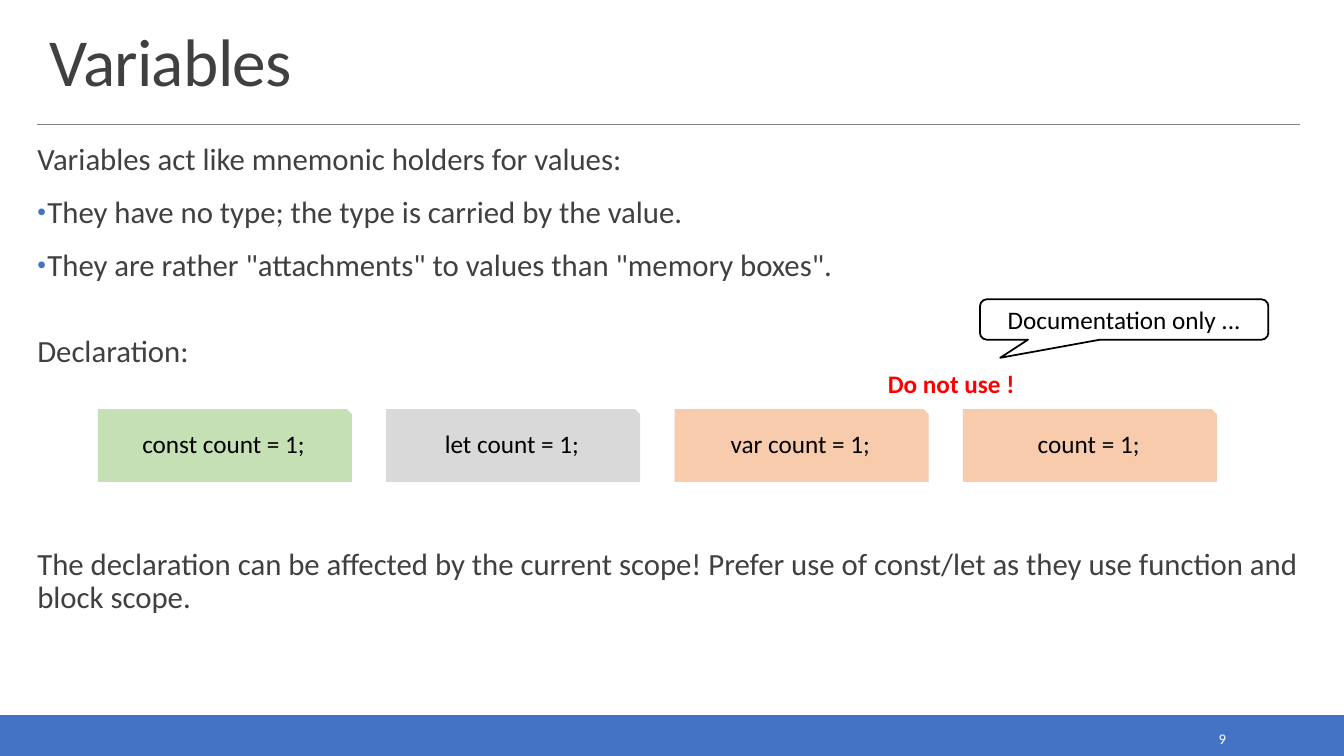
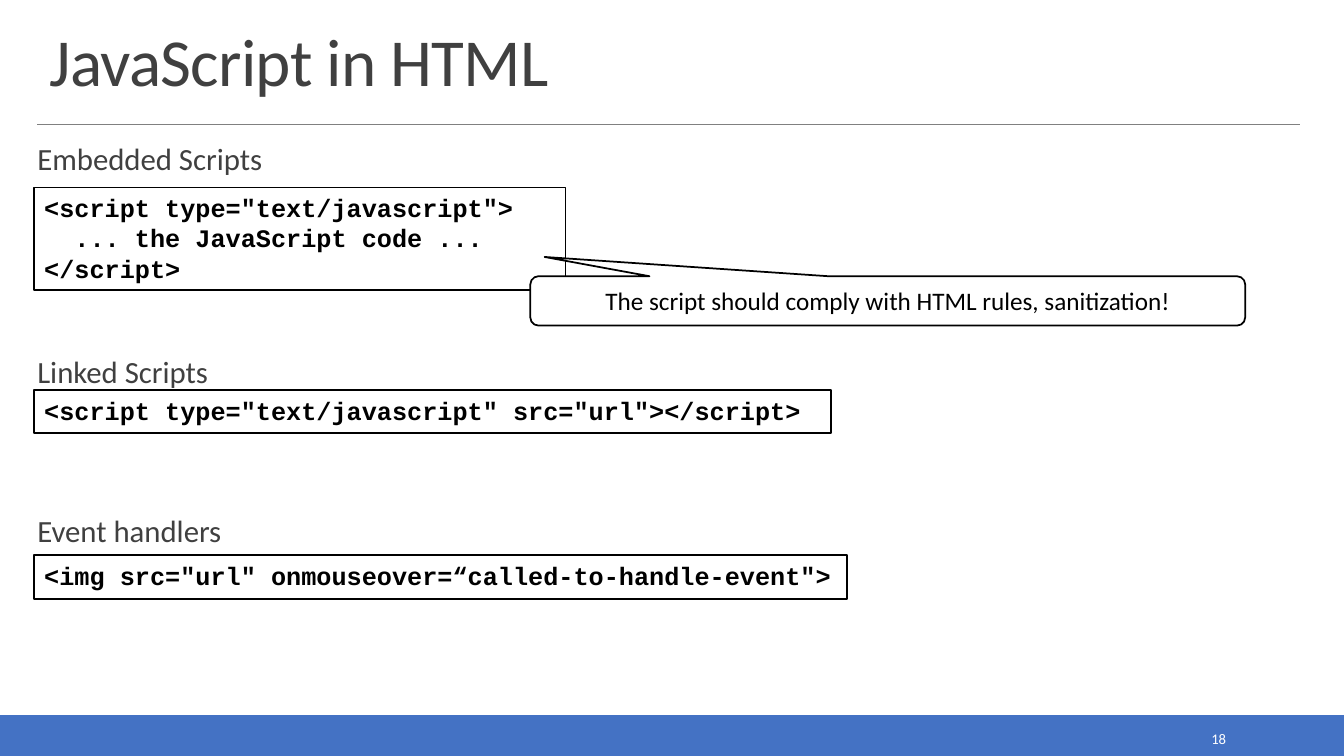
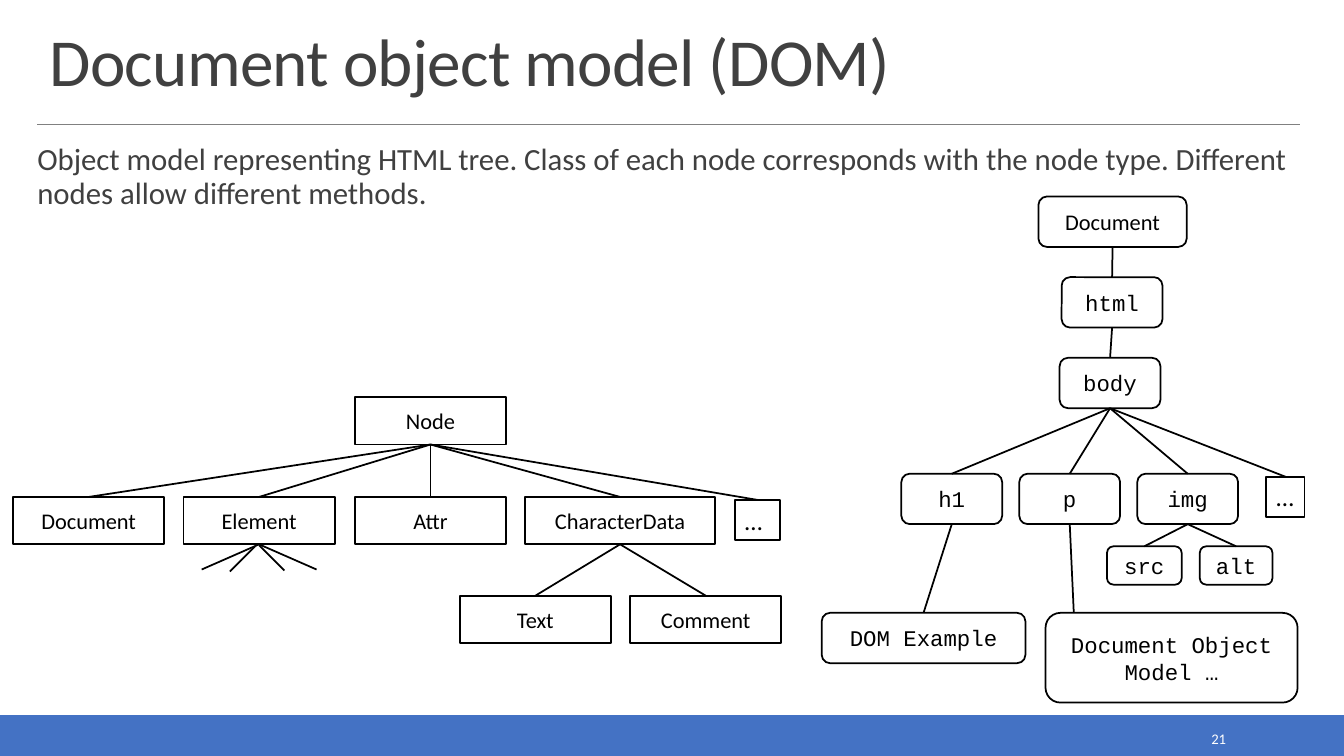
from lxml import etree
from pptx import Presentation, util as u
from pptx.dml.color import RGBColor
from pptx.enum import shapes, text
from pptx.oxml.ns import qn

# Shared look
W, H = 13.33, 7.5
BLUE, GREY, DARK, BLACK, WHITE, RED = "4472C4", "808080", "404040", "000000", "FFFFFF", "FF0000"
GREEN, SILVER, PEACH = "C5E0B4", "D9D9D9", "F8CBAD"
SANS, MONO = "Calibri", "Courier New"
MARGIN, TEXT_W = 0.37, 12.52
BAND_H = 0.4
S, A, V = shapes.MSO_SHAPE, text.PP_ALIGN, text.MSO_ANCHOR
TITLE = dict(size=48, color=DARK)
BODY = dict(size=22, color=DARK)
CODE = dict(size=18, name=MONO, bold=True)

# Content: body paragraphs are (text, space before in points, bulleted)
VARIABLES = [
    ("Variables act like mnemonic holders for values:", 12, False),
    ("They have no type; the type is carried by the value.", 12, True),
    ('They are rather "attachments" to values than "memory boxes".', 12, True),
    ("Declaration:", 36, False),
    ("The declaration can be affected by the current scope! Prefer use of "
     "const/let as they use function and block scope.", 126, False),
]
DECLARATIONS = [("const count = 1;", GREEN), ("let count = 1;", SILVER),
                ("var count = 1;", PEACH), ("count = 1;", PEACH)]

SCRIPTS = [("Embedded Scripts", 12, False), ("Linked Scripts", 126, False),
           ("Event handlers", 88, False)]
# Code boxes: top, width, height, lines as (text, indent)
CODE_BOXES = [
    (1.86, 5.27, 1.02, [('<script type="text/javascript">', 0),
                        ("... the JavaScript code ...", 0.3), ("</script>", 0)]),
    (3.87, 7.9, 0.43, [('<script type="text/javascript" src="url"></script>', 0)]),
    (5.51, 8.06, 0.43, [('<img src="url" onmouseover=“called-to-handle-event">', 0)]),
]

DOM = [("Object model representing HTML tree. Class of each node corresponds with the "
        "node type. Different nodes allow different methods.", 12, False)]
# Trees: rows of (top, height, nodes); a node is (key, label, left, width)
CLASS_ROWS = [
    (3.94, 0.47, [("node", "Node", 3.52, 1.5)]),
    (4.93, 0.47, [("doc", "Document", 0.13, 1.5), ("element", "Element", 1.82, 1.5),
                  ("attr", "Attr", 3.52, 1.5), ("chars", "CharacterData", 5.21, 1.88)]),
    (4.96, 0.4, [("more", "…", 7.29, 0.45)]),
    (5.91, 0.47, [("text", "Text", 4.56, 1.5), ("comment", "Comment", 6.25, 1.5)]),
]
CLASS_EDGES = {"node": ["doc", "element", "attr", "chars", "more"],
               "chars": ["text", "comment"]}
# Open branches below Element: from x, y to x, y
STUBS = [(2.57, 5.4, 2, 5.65), (2.57, 5.4, 3.14, 5.65),
         (2.53, 5.42, 2.28, 5.67), (2.57, 5.41, 2.82, 5.66)]
PAGE_ROWS = [
    (1.95, 0.5, [("doc", "Document", 10.3, 1.47)]),
    (2.75, 0.5, [("html", "html", 10.53, 1)]),
    (3.55, 0.5, [("body", "body", 10.51, 1)]),
    (4.7, 0.5, [("h1", "h1", 8.94, 1), ("p", "p", 10.11, 1), ("img", "img", 11.28, 1)]),
    (4.73, 0.4, [("more", "…", 12.56, 0.38)]),
    (5.42, 0.38, [("src", "src", 10.98, 0.74), ("alt", "alt", 11.9, 0.72)]),
    (6.08, 0.5, [("heading", "DOM Example", 8.15, 2.02)]),
    (6.08, 0.89, [("para", "Document Object Model …", 10.37, 2.5)]),
]
PAGE_EDGES = {"doc": ["html"], "html": ["body"], "body": ["h1", "p", "img", "more"],
              "img": ["src", "alt"], "h1": ["heading"]}


# Helpers
def rgb(code):
    return RGBColor.from_string(code)


def style(r, size=18, color=BLACK, name=SANS, bold=False):
    for key, value in dict(size=u.Pt(size), name=name, bold=bold).items():
        setattr(r.font, key, value)
    r.font.color.rgb = rgb(color)


def write(tf, lines, align=A.LEFT, anchor=V.TOP, wrap=True, insets=None, **font):
    """Fill a text frame with lines, each a string or (string, indent in inches)."""
    tf.word_wrap, tf.vertical_anchor = wrap, anchor
    tf.auto_size = text.MSO_AUTO_SIZE.NONE
    for side, inset in zip(("left", "top", "right", "bottom"), insets or ()):
        setattr(tf, "margin_" + side, u.Inches(inset))
    for i, line in enumerate(lines):
        label, indent = (line, 0) if isinstance(line, str) else line
        p = tf.paragraphs[0] if i == 0 else tf.add_paragraph()
        p.alignment = align
        if indent:
            p._p.get_or_add_pPr().set("marL", str(u.Inches(indent)))
        r = p.add_run()
        r.text = label
        style(r, **font)
    return tf


def place(sp, box):
    for key, value in zip(("left", "top", "width", "height"), box):
        setattr(sp, key, u.Inches(value))


def add_box(s, kind, box, fill=None, line=None, adj=()):
    sp = s.shapes.add_shape(kind, *map(u.Inches, box))
    sp.shadow.inherit = False
    for part, color in ((sp.fill, fill), (sp.line.fill, line)):
        if color:
            part.solid()
            part.fore_color.rgb = rgb(color)
        else:
            part.background()
    if line:
        sp.line.width = u.Pt(1.25)
    for i, value in enumerate(adj):
        sp.adjustments[i] = value
    return sp


def add_label(s, box, label, **fmt):
    tb = s.shapes.add_textbox(*map(u.Inches, box))
    write(tb.text_frame, [label], **fmt)


def add_line(s, x1, y1, x2, y2, color=BLACK, width=1.25):
    c = s.shapes.add_connector(shapes.MSO_CONNECTOR.STRAIGHT, *map(u.Inches, (x1, y1, x2, y2)))
    c.line.color.rgb, c.line.width = rgb(color), u.Pt(width)
    etree.SubElement(c._element.spPr, qn("a:effectLst"))
    return c


def add_callout(s, box, label, tip):
    sp = add_box(s, S.ROUNDED_RECTANGULAR_CALLOUT, box, WHITE, BLACK, (*tip, 0.167))
    write(sp.text_frame, [label], A.CENTER, V.MIDDLE)


def set_bullet(p, bulleted):
    pPr = p._p.get_or_add_pPr()
    hang = u.Inches(0.1) if bulleted else 0
    pPr.set("marL", str(hang))
    pPr.set("indent", str(-hang))
    if bulleted:
        color = etree.SubElement(pPr, qn("a:buClr"))
        etree.SubElement(color, qn("a:srgbClr"), val=BLUE)
        etree.SubElement(pPr, qn("a:buSzPct"), val="80000")
        etree.SubElement(pPr, qn("a:buChar"), char="•")
    else:
        etree.SubElement(pPr, qn("a:buNone"))


def new_slide(prs, title, number, body, body_h=5.51):
    s = prs.slides.add_slide(prs.slide_layouts[1])
    add_box(s, S.RECTANGLE, (0, H - BAND_H, W, BAND_H), BLUE, BLUE)
    add_line(s, MARGIN, 1.23, MARGIN + TEXT_W, 1.23, GREY, 0.5)
    add_label(s, (10.83, 7.19, 1.43, 0.28), str(number), align=A.RIGHT, anchor=V.MIDDLE,
              size=10.5, color=WHITE)

    head, content = s.shapes.title, s.placeholders[1]
    place(head, (0.39, 0.2, TEXT_W, 0.84))
    p = write(head.text_frame, [title], anchor=V.BOTTOM, **TITLE).paragraphs[0]
    p.line_spacing = 0.85
    p.runs[0]._r.get_or_add_rPr().set("spc", "-50")

    place(content, (MARGIN, 1.39, TEXT_W, body_h))
    tf = write(content.text_frame, [item[0] for item in body],
               insets=(0, 0.04, 0, 0.04), **BODY)
    for p, (_, before, bulleted) in zip(tf.paragraphs, body):
        p.line_spacing, p.space_before, p.space_after = 0.9, u.Pt(before), u.Pt(2)
        set_bullet(p, bulleted)
    return s


def add_tree(s, kind, rows, edges, font_of):
    """Draw the nodes, then join parent bottoms to child tops."""
    nodes = {}
    for top, height, row in rows:
        for key, label, left, width in row:
            more = key == "more"
            sp = add_box(s, S.RECTANGLE if more else kind, (left, top, width, height),
                         WHITE, BLACK)
            if more:
                write(sp.text_frame, [label], wrap=False)
            else:
                write(sp.text_frame, [label], A.CENTER, V.MIDDLE, size=16, name=font_of(key))
            nodes[key] = sp
    for parent, children in edges.items():
        for child in children:
            c = add_line(s, 0, 0, 1, 1)
            c.begin_connect(nodes[parent], 2)
            c.end_connect(nodes[child], 0)
    return nodes


# Slides
def variables(prs):
    s = new_slide(prs, "Variables", 9, VARIABLES)
    for i, (label, fill) in enumerate(DECLARATIONS):
        sp = add_box(s, S.SNIP_1_RECTANGLE, (0.97 + 2.86 * i, 4.06, 2.52, 0.72), fill,
                     adj=(0.07,))
        write(sp.text_frame, [label], A.CENTER, insets=(0.2, 0.16, 0.2, 0.2))
    add_label(s, (7.11, 3.6, 4.65, 0.4), "Do not use !", align=A.CENTER, color=RED, bold=True)
    add_callout(s, (9.72, 2.97, 2.86, 0.4), "Documentation only ...", (-0.43, 0.95))


def scripts(prs):
    s = new_slide(prs, "JavaScript in HTML", 18, SCRIPTS)
    for top, width, height, lines in CODE_BOXES:
        sp = add_box(s, S.RECTANGLE, (0.34, top, width, height), line=BLACK)
        write(sp.text_frame, lines, **CODE)
    add_callout(s, (5.26, 2.74, 7.09, 0.49),
                "The script should comply with HTML rules, sanitization!", (-0.48, -0.89))


def dom(prs):
    s = new_slide(prs, "Document object model (DOM)", 21, DOM, 0.71)
    page = add_tree(s, S.ROUNDED_RECTANGLE, PAGE_ROWS, PAGE_EDGES,
                    lambda key: SANS if key == "doc" else MONO)
    add_line(s, 10.61, 5.2, 10.65, 6.08).begin_connect(page["p"], 2)
    add_tree(s, S.RECTANGLE, CLASS_ROWS, CLASS_EDGES, lambda key: SANS)
    for stub in STUBS:
        add_line(s, *stub)


def main():
    prs = Presentation()
    prs.slide_width, prs.slide_height = u.Inches(W), u.Inches(H)
    for build in (variables, scripts, dom):
        build(prs)
    prs.save("out.pptx")


if __name__ == "__main__":
    main()
